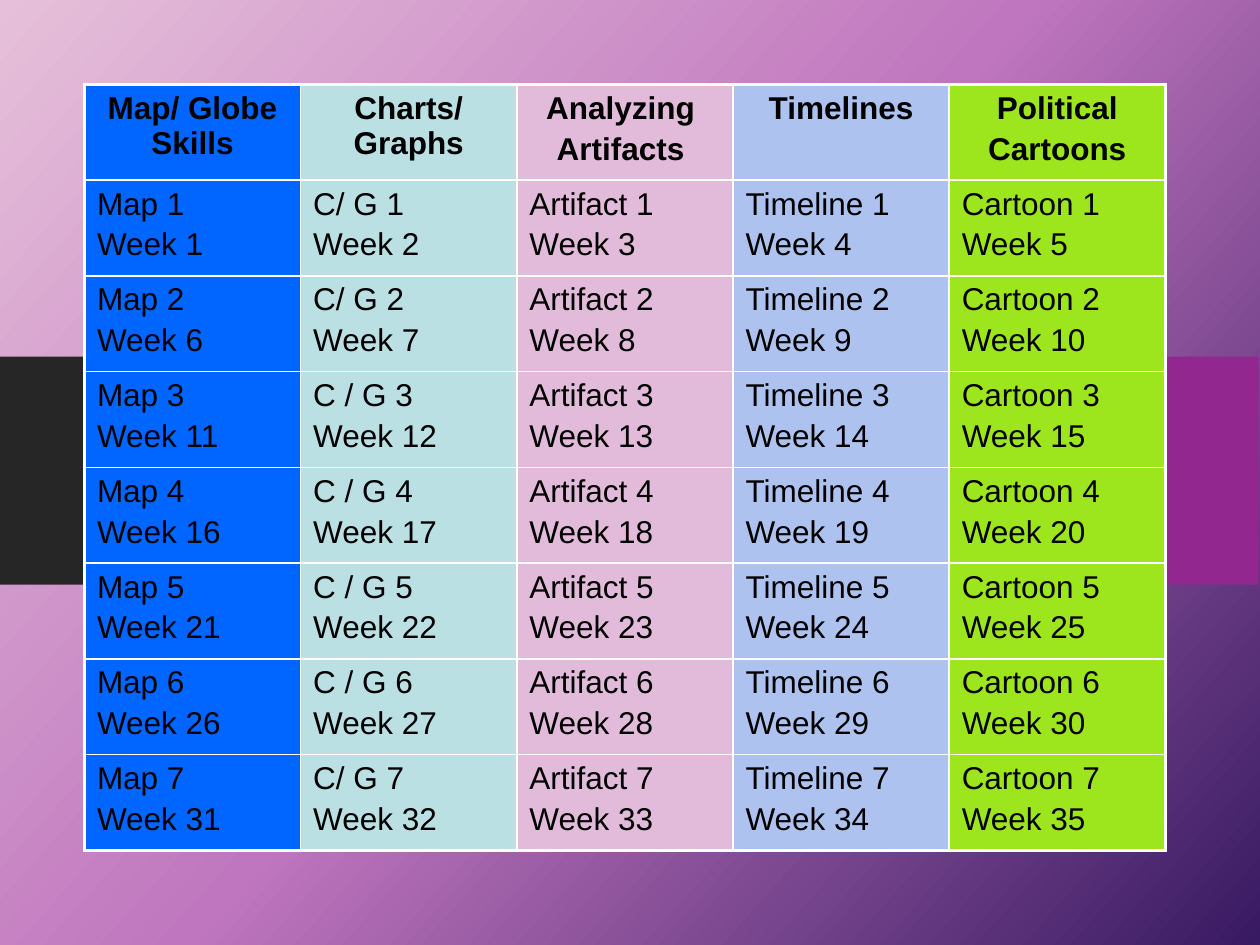
from copy import deepcopy
from dataclasses import dataclass

from lxml import etree
from pptx import Presentation
from pptx import util as u
from pptx.dml.color import RGBColor
from pptx.enum import shapes, text
from pptx.oxml.ns import qn

COLORS = {
    "sky": "E6C0DA", "orchid": "BF76BE", "night": "381A62",
    "charcoal": "262626", "purple": "92278F",
    "blue": "0066FF", "teal": "BBE0E3", "pink": "E3BBDA",
    "periwinkle": "AEC2F0", "lime": "9DE61E",
    "ink": "000000", "rule": "FFFFFF",
}
FONT = "Arial"
WEEK_ROWS = 7
TABLE_LEFT, TABLE_TOP, TABLE_WIDTH, ROW_HEIGHT = 0.67, 0.67, 8.58, 0.76
INNER_RULE, OUTER_RULE = 1, 2.25


@dataclass
class Band:
    left: float
    width: float
    color: str


@dataclass
class Skill:
    heading: list[str]
    labels: list[str]
    color: str


def numbered(label: str) -> list[str]:
    return [f"{label} {number}" for number in range(1, WEEK_ROWS + 1)]


BANDS = [Band(0, 7.36, "charcoal"), Band(7.47, 2.52, "purple")]
SKILLS = [
    Skill(["Map/ Globe Skills"], numbered("Map"), "blue"),
    Skill(["Charts/ Graphs"],
          ["C/ G 1", "C/ G 2", "C / G 3", "C / G 4", "C / G 5", "C / G 6", "C/ G 7"],
          "teal"),
    Skill(["Analyzing ", "Artifacts "], numbered("Artifact"), "pink"),
    Skill(["Timelines"], numbered("Timeline"), "periwinkle"),
    Skill(["Political", "Cartoons"], numbered("Cartoon"), "lime"),
]


def rgb(name: str) -> RGBColor:
    return RGBColor.from_string(COLORS[name])


def paint_background(slide) -> None:
    fill = slide.background.fill
    fill.gradient()
    fill.gradient_angle = 318  # counter-clockwise
    stop_list = slide.element.find(".//" + qn("a:gsLst"))
    stop_list.append(deepcopy(stop_list[-1]))
    for stop, (position, color) in zip(
            fill.gradient_stops, [(0, "sky"), (0.49, "orchid"), (1, "night")]):
        stop.position = position
        stop.color.rgb = rgb(color)


def add_band(slide, band: Band) -> None:
    bar = slide.shapes.add_shape(
        shapes.MSO_SHAPE.RECTANGLE, u.Inches(band.left), u.Inches(2.83),
        u.Inches(band.width), u.Inches(1.81))
    bar.shadow.inherit = False
    bar.fill.solid()
    bar.fill.fore_color.rgb = rgb(band.color)
    bar.line.fill.background()


def set_borders(cell, widths: dict[str, float]) -> None:
    properties = cell._tc.get_or_add_tcPr()
    for index, (side, width) in enumerate(widths.items()):
        line = etree.Element(qn(f"a:ln{side}"), w=str(u.Pt(width)))
        solid = etree.SubElement(line, qn("a:solidFill"))
        etree.SubElement(solid, qn("a:srgbClr"), val=COLORS["rule"])
        properties.insert(index, line)


def fill_cell(cell, lines: list[str], color: str, is_heading: bool) -> None:
    cell.fill.solid()
    cell.fill.fore_color.rgb = rgb(color)
    frame = cell.text_frame
    for index, line in enumerate(lines):
        paragraph = frame.add_paragraph() if index else frame.paragraphs[0]
        if index:
            paragraph.space_before = u.Pt(3.2)
        paragraph.alignment = text.PP_ALIGN.CENTER if is_heading else text.PP_ALIGN.LEFT
        run = paragraph.add_run()
        run.text = line
        run.font.name = FONT
        run.font.size = u.Pt(18)
        run.font.bold = is_heading
        run.font.color.rgb = rgb("ink")


def add_schedule(slide, skills: list[Skill]) -> None:
    row_count, column_count = WEEK_ROWS + 1, len(skills)
    schedule = slide.shapes.add_table(
        row_count, column_count, u.Inches(TABLE_LEFT), u.Inches(TABLE_TOP),
        u.Inches(TABLE_WIDTH), u.Inches(ROW_HEIGHT * row_count)).table
    schedule.horz_banding = False
    schedule.first_row = False

    for row in range(row_count):
        for column, skill in enumerate(skills):
            # Weeks run across the skills, then down
            lines = skill.heading if row == 0 else [
                skill.labels[row - 1],
                f"Week {(row - 1) * column_count + column + 1}"]
            cell = schedule.cell(row, column)
            fill_cell(cell, lines, skill.color, is_heading=row == 0)
            on_edge = {"L": column == 0, "R": column == column_count - 1,
                       "T": row == 0, "B": row == row_count - 1}
            set_borders(cell, {side: OUTER_RULE if outer else INNER_RULE
                               for side, outer in on_edge.items()})


def main() -> None:
    deck = Presentation()
    deck.slide_width, deck.slide_height = u.Inches(10), u.Inches(7.5)
    slide = deck.slides.add_slide(deck.slide_layouts[6])

    # Backdrop
    paint_background(slide)
    for band in BANDS:
        add_band(slide, band)

    # Weekly skills schedule
    add_schedule(slide, SKILLS)
    deck.save("out.pptx")


if __name__ == "__main__":
    main()
